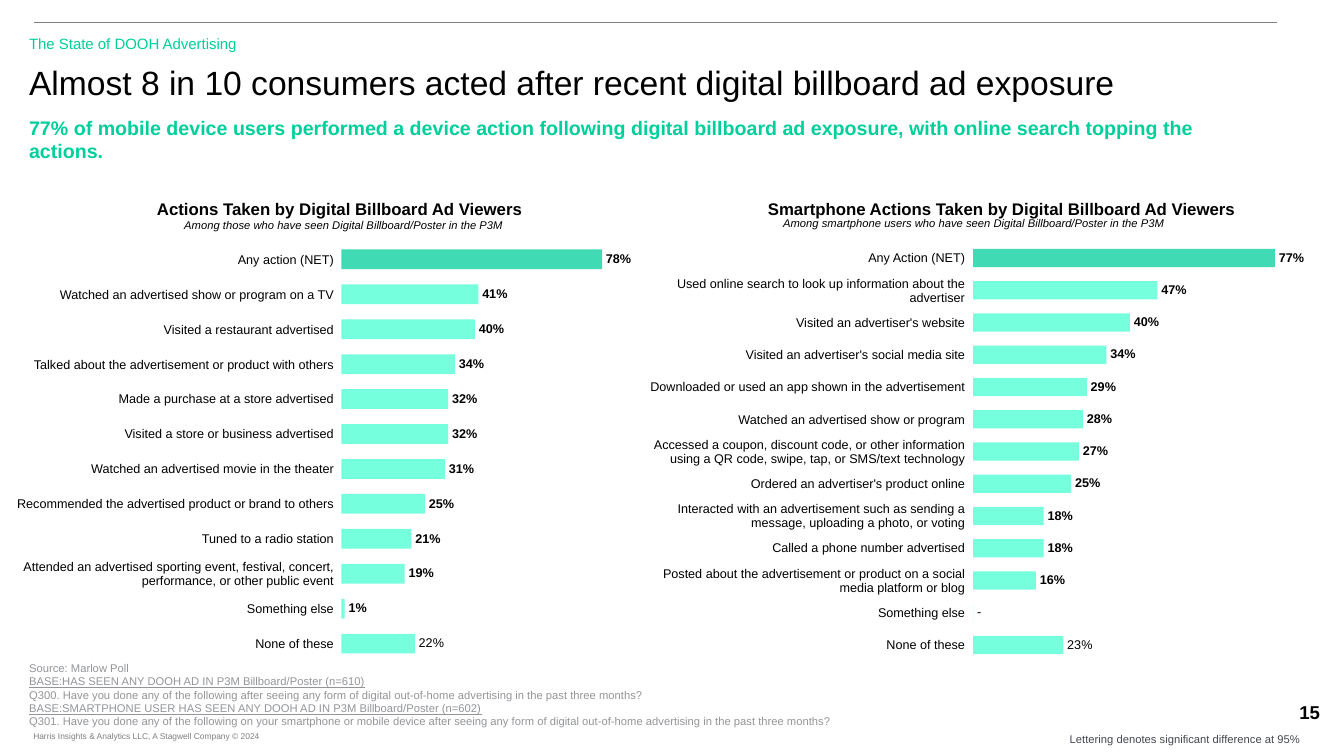
from dataclasses import dataclass, field

from lxml import etree
from pptx import Presentation
from pptx import util as u
from pptx.chart import data as cd
from pptx.dml import color as dc
from pptx.enum import chart as ec
from pptx.enum import shapes as es
from pptx.enum import text as et
from pptx.oxml import ns

FONT = "Arial"
BLACK, GREEN, MINT, GREY = "000000", "00CF9C", "49FFD2", "939598"
TOP, HIGH = 2.4, 4.16
LEFT, MID, RIGHT = et.PP_ALIGN.LEFT, et.PP_ALIGN.CENTER, et.PP_ALIGN.RIGHT


@dataclass
class Label:
    words: str
    box: tuple
    size: float
    color: str = BLACK
    bold: bool = False
    italic: bool = False
    align: int = LEFT
    inset: tuple = (0.1, 0.05, 0.1, 0.05)
    wrap: bool = True
    lines: tuple = ()


@dataclass
class Panel:
    left: float
    wide: float
    plot: tuple
    names: float
    rows: list
    plain: dict = field(default_factory=dict)


LABELS = [
    Label("15", (12.48, 6.9, 1.02, 0.33), 13.3, bold=True, align=MID),
    Label("Harris Insights & Analytics LLC, A Stagwell Company © 2024",
          (0.33, 7.2, 2.39, 0.2), 6, "7F7F7F", inset=(0, 0.05, 0.1, 0.05), wrap=False),
    Label("The State of DOOH Advertising", (0.19, 0.29, 6.67, 0.28), 10.7, GREEN),
    Label("Almost 8 in 10 consumers acted after recent digital billboard ad exposure",
          (0.19, 0.57, 12.47, 0.47), 24),
    Label("77% of mobile device users performed a device action following digital billboard "
          "ad exposure, with online search topping the actions.",
          (0.19, 1.1, 12.47, 0.41), 14, GREEN, bold=True),
    Label("Actions Taken by Digital Billboard Ad Viewers",
          (0.69, 1.92, 5.36, 0.3), 12, bold=True, align=MID),
    Label("Among those who have seen Digital Billboard/Poster in the P3M",
          (1.35, 2.12, 4.12, 0.24), 8, italic=True, align=MID),
    Label("Smartphone Actions Taken by Digital Billboard Ad Viewers",
          (6.79, 1.92, 6.29, 0.3), 12, bold=True, align=MID),
    Label("Among smartphone users who have seen Digital Billboard/Poster in the P3M",
          (7.12, 2.1, 5.08, 0.24), 8, italic=True, align=MID),
    Label("Source: Marlow Poll\n"
          "BASE:HAS SEEN ANY DOOH AD IN P3M Billboard/Poster (n=610)\n"
          "Q300. Have you done any of the following after seeing any form of digital "
          "out-of-home advertising in the past three months?\n"
          "BASE:SMARTPHONE USER HAS SEEN ANY DOOH AD IN P3M Billboard/Poster (n=602)\n"
          "Q301. Have you done any of the following on your smartphone or mobile device after "
          "seeing any form of digital out-of-home advertising in the past three months?",
          (0.19, 6.51, 10.12, 0.77), 8, GREY, lines=(1, 3)),
    Label("Lettering denotes significant difference at 95%",
          (10.61, 7.27, 2.35, 0.14), 8, "44474E", inset=(0, 0, 0, 0)),
]

PANELS = [
    Panel(-0.64, 8.05, (0.5, 0.412), 0.11, [
        ("Any action (NET)", 0.78),
        ("Watched an advertised show or program on a TV", 0.41),
        ("Visited a restaurant advertised", 0.4),
        ("Talked about the advertisement or product with others", 0.34),
        ("Made a purchase at a store advertised", 0.32),
        ("Visited a store or business advertised", 0.32),
        ("Watched an advertised movie in the theater", 0.31),
        ("Recommended the advertised product or brand to others", 0.25),
        ("Tuned to a radio station", 0.21),
        ("Attended an advertised sporting event, festival, concert, performance, "
         "or other public event", 0.19),
        ("Something else", 0.01),
        ("None of these", 0.22),
    ], {11: "22%"}),
    Panel(6.19, 7.35, (0.471, 0.529), 6.37, [
        ("Any Action (NET)", 0.77),
        ("Used online search to look up information about the advertiser", 0.47),
        ("Visited an advertiser's website", 0.4),
        ("Visited an advertiser's social media site", 0.34),
        ("Downloaded or used an app shown in the advertisement", 0.29),
        ("Watched an advertised show or program", 0.28),
        ("Accessed a coupon, discount code, or other information using a QR code, "
         "swipe, tap, or SMS/text technology", 0.27),
        ("Ordered an advertiser's product online", 0.25),
        ("Interacted with an advertisement such as sending a message, uploading a photo, "
         "or voting", 0.18),
        ("Called a phone number advertised", 0.18),
        ("Posted about the advertisement or product on a social media platform or blog", 0.16),
        ("Something else", 0),
        ("None of these", 0.23),
    ], {11: "-", 12: "23%"}),
]


def rgb(code: str) -> dc.RGBColor:
    return dc.RGBColor.from_string(code)


def style(font, size: float, color: str = BLACK, bold: bool = False) -> None:
    font.name, font.size, font.bold = FONT, u.Pt(size), bold
    font.color.rgb = rgb(color)


def write(slide, item: Label) -> None:
    frame = slide.shapes.add_textbox(*map(u.Inches, item.box)).text_frame
    frame.word_wrap = item.wrap
    (frame.margin_left, frame.margin_top,
     frame.margin_right, frame.margin_bottom) = map(u.Inches, item.inset)
    frame.text = item.words
    for i, para in enumerate(frame.paragraphs):
        para.alignment = item.align
        for run in para.runs:
            style(run.font, item.size, item.color, item.bold)
            run.font.italic = item.italic
            run.font.underline = i in item.lines


def place(chart, start: float, wide: float) -> None:
    area = chart._chartSpace.chart.plotArea
    for old in area.findall(ns.qn("c:layout")):
        area.remove(old)
    layout = etree.Element(ns.qn("c:layout"))
    area.insert(0, layout)
    manual = etree.SubElement(layout, ns.qn("c:manualLayout"))
    for tag, val in [("layoutTarget", "inner"), ("xMode", "edge"), ("yMode", "edge"),
                     ("x", start), ("y", 0), ("w", wide), ("h", 1)]:
        etree.SubElement(manual, ns.qn(f"c:{tag}")).set("val", str(val))


def plot(slide, panel: Panel) -> None:
    data = cd.CategoryChartData(number_format="0%")
    data.categories = [str(i + 1) for i in range(len(panel.rows))]
    data.add_series("Series 1", [val for _, val in panel.rows])
    box = map(u.Inches, (panel.left, TOP, panel.wide, HIGH))
    chart = slide.shapes.add_chart(ec.XL_CHART_TYPE.BAR_CLUSTERED, *box, data).chart
    chart.has_legend = chart.has_title = False
    style(chart.font, 14)
    chart.category_axis.reverse_order = True
    axis = chart.value_axis
    axis.minimum_scale, axis.maximum_scale = 0, 1
    axis.has_major_gridlines = False
    chart.category_axis.visible = axis.visible = False
    place(chart, *panel.plot)

    bars = chart.plots[0]
    bars.gap_width, bars.vary_by_categories = 77, False
    series = bars.series[0]
    series.invert_if_negative = False
    for part, code in [(series, MINT), (series.points[0], GREEN)]:
        part.format.fill.solid()
        part.format.fill.fore_color.rgb = rgb(code)
    for node in series._element.iter(ns.qn("a:srgbClr")):
        etree.SubElement(node, ns.qn("a:alpha")).set("val", "75000")

    tags = series.data_labels
    tags.show_value = True
    tags.number_format, tags.number_format_is_linked = "0%", False
    tags.position = ec.XL_LABEL_POSITION.OUTSIDE_END
    style(tags.font, 9, bold=True)
    for i, words in panel.plain.items():
        tag = series.points[i].data_label
        tag.text_frame.text = words
        style(tag.text_frame.paragraphs[0].runs[0].font, 9)
        tag.position = ec.XL_LABEL_POSITION.OUTSIDE_END


def fill(slide, panel: Panel) -> None:
    count = len(panel.rows)
    box = map(u.Inches, (panel.names, TOP, 3.21, HIGH))
    table = slide.shapes.add_table(count, 1, *box).table
    table.first_row = table.horz_banding = False
    for i, (name, _) in enumerate(panel.rows):
        table.rows[i].height = u.Inches(HIGH / count)
        cell = table.cell(i, 0)
        cell.fill.background()
        cell.vertical_anchor = et.MSO_ANCHOR.MIDDLE
        cell.margin_left = cell.margin_right = cell.margin_top = u.Inches(0.01)
        cell.margin_bottom = 0
        cell.text = name
        para = cell.text_frame.paragraphs[0]
        para.alignment = RIGHT
        style(para.runs[0].font, 9)


def rule(slide) -> None:
    ends = map(u.Inches, (0.34, 0.22, 12.67, 0.22))
    line = slide.shapes.add_connector(es.MSO_CONNECTOR.STRAIGHT, *ends)
    line.line.color.rgb = rgb("808080")
    line.line.width = u.Pt(0.5)
    etree.SubElement(line._element.spPr, ns.qn("a:effectLst"))


def main() -> None:
    deck = Presentation()
    deck.slide_width, deck.slide_height = u.Inches(13.33), u.Inches(7.5)
    slide = deck.slides.add_slide(deck.slide_layouts[6])
    rule(slide)
    for draw in (plot, fill):
        for panel in PANELS:
            draw(slide, panel)
    for item in LABELS:
        write(slide, item)
    deck.save("out.pptx")


if __name__ == "__main__":
    main()
